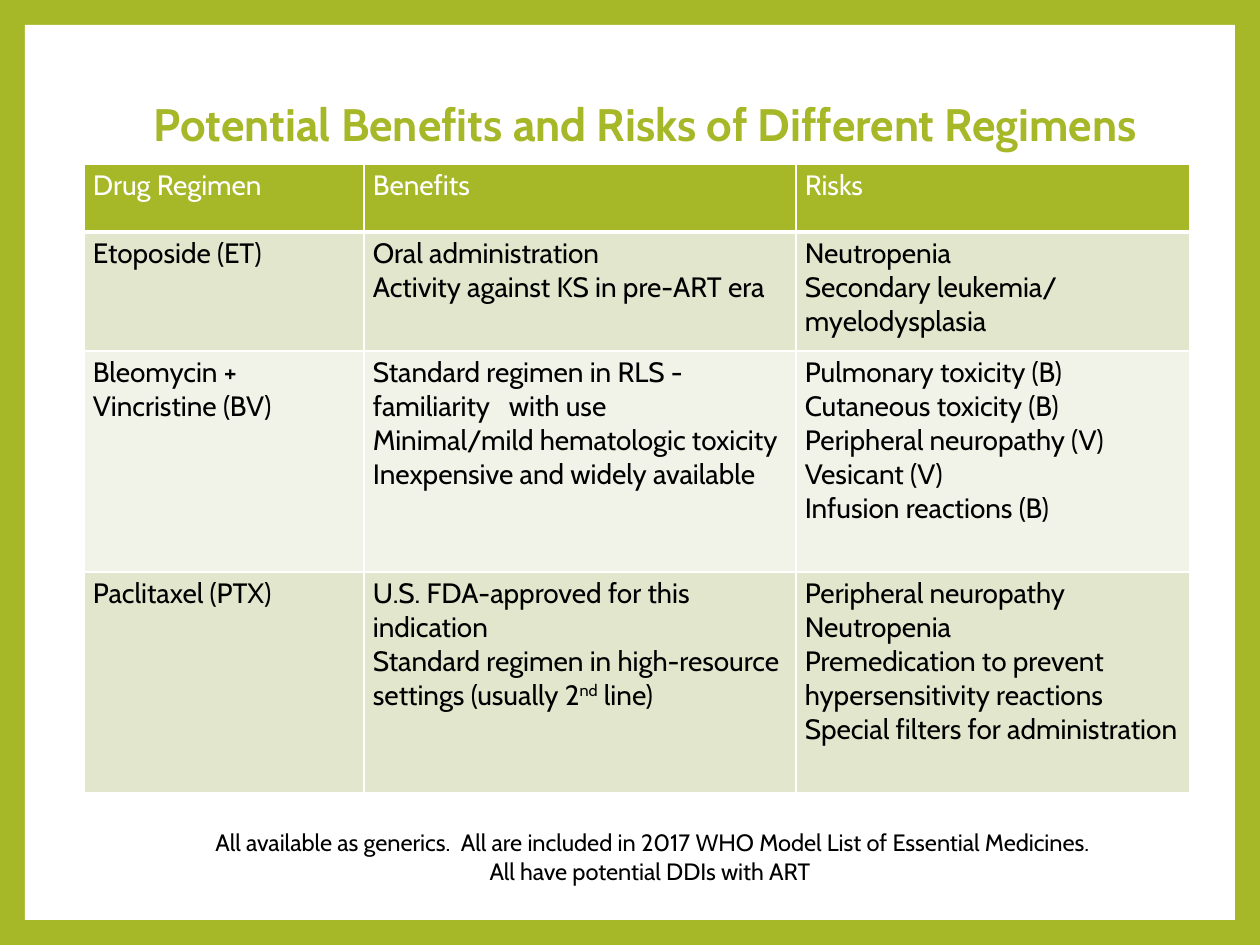
import pptx
import pptx.dml.color
import pptx.enum.shapes
import pptx.enum.text
import pptx.oxml
import pptx.oxml.ns
import pptx.util

PX_PER_INCH = 126
FONT = "Cabin"
COLORS = {
    "green": "A6B727",
    "white": "FFFFFF",
    "black": "000000",
    "band_dark": "E1E6CD",
    "band_light": "F1F3E8",
}
ALIGN = pptx.enum.text.PP_ALIGN
ANCHOR = pptx.enum.text.MSO_ANCHOR

TITLE = "Potential Benefits and Risks of Different Regimens"
COLUMN_WIDTHS = [280, 432, 394]
ROW_HEIGHTS = [68, 119, 221, 221]
# Each cell is a list of paragraphs; text between carets is superscript.
REGIMENS = [
    [["Drug Regimen"], ["Benefits"], ["Risks"]],
    [
        ["Etoposide (ET)"],
        ["Oral administration", "Activity against KS in pre-ART era"],
        ["Neutropenia", "Secondary leukemia/", "myelodysplasia"],
    ],
    [
        ["Bleomycin + Vincristine (BV)"],
        [
            "Standard regimen in RLS - familiarity   with use",
            "Minimal/mild hematologic toxicity",
            "Inexpensive and widely available",
        ],
        [
            "Pulmonary toxicity (B)",
            "Cutaneous toxicity (B)",
            "Peripheral neuropathy (V)",
            "Vesicant (V)",
            "Infusion reactions (B)",
        ],
    ],
    [
        ["Paclitaxel (PTX)"],
        [
            "U.S. FDA-approved for this indication",
            "Standard regimen in high-resource settings (usually 2^nd^ line)",
        ],
        [
            "Peripheral neuropathy",
            "Neutropenia",
            "Premedication to prevent hypersensitivity reactions",
            "Special filters for administration",
        ],
    ],
]
FOOTNOTE = [
    "All available as generics.  All are included in 2017 WHO Model List of Essential Medicines.",
    "All have potential DDIs with ART ",
]


def px(length):
    return pptx.util.Emu(round(length * 914400 / PX_PER_INCH))


def paint(fill, color):
    fill.solid()
    fill.fore_color.rgb = pptx.dml.color.RGBColor.from_string(COLORS[color])


def write(frame, lines, size, color="black", bold=False, align=ALIGN.LEFT, spacing=1.0):
    frame.word_wrap = True
    for index, line in enumerate(lines):
        paragraph = frame.paragraphs[0] if index == 0 else frame.add_paragraph()
        paragraph.alignment = align
        paragraph.line_spacing = spacing
        for part, text in enumerate(line.split("^")):
            run = paragraph.add_run()
            run.text = text
            run.font.name = FONT
            run.font.size = pptx.util.Pt(size)
            run.font.bold = bold
            paint(run.font.fill, color)
            if part % 2:
                run._r.get_or_add_rPr().set("baseline", "30000")


def border_cell(cell, bottom=1):
    """Draw white cell borders, all 1 pt wide but for the bottom one."""
    properties = cell._tc.get_or_add_tcPr()
    for side, width in {"L": 1, "R": 1, "T": 1, "B": bottom}.items():
        properties.append(pptx.oxml.parse_xml(
            f'<a:ln{side} {pptx.oxml.ns.nsdecls("a")} w="{pptx.util.Pt(width)}">'
            f'<a:solidFill><a:srgbClr val="{COLORS["white"]}"/></a:solidFill></a:ln{side}>'
        ))


def add_frame(slide, left, top, width, height):
    """Green background with a white panel behind everything else."""
    paint(slide.background.fill, "green")
    panel = slide.shapes.add_shape(
        pptx.enum.shapes.MSO_SHAPE.RECTANGLE, px(left), px(top), px(width), px(height)
    )
    panel.shadow.inherit = False
    paint(panel.fill, "white")
    panel.line.fill.background()
    slide.shapes._spTree.insert(2, panel._element)


def set_title(slide, left, top, width, height):
    title = slide.shapes.title
    title.left, title.top, title.width, title.height = map(px, (left, top, width, height))
    title.text_frame.vertical_anchor = ANCHOR.MIDDLE
    write(title.text_frame, [TITLE], 26, "green", bold=True, align=ALIGN.CENTER, spacing=0.9)


def add_regimen_table(slide, left, top):
    table = slide.shapes.add_table(
        len(ROW_HEIGHTS), len(COLUMN_WIDTHS), px(left), px(top),
        px(sum(COLUMN_WIDTHS)), px(sum(ROW_HEIGHTS)),
    ).table
    for column, width in zip(table.columns, COLUMN_WIDTHS):
        column.width = px(width)
    for index, (row, height, contents) in enumerate(zip(table.rows, ROW_HEIGHTS, REGIMENS)):
        row.height = px(height)
        is_header = index == 0
        band = "green" if is_header else ("band_light", "band_dark")[index % 2]
        for cell, lines in zip(row.cells, contents):
            cell.margin_left = cell.margin_right = px(9)
            cell.margin_top = cell.margin_bottom = px(5)
            border_cell(cell, bottom=3 if is_header else 1)
            paint(cell.fill, band)
            write(cell.text_frame, lines, 16, "white" if is_header else "black")


def add_footnote(slide, left, top, width, height):
    footnote = slide.shapes.add_textbox(px(left), px(top), px(width), px(height))
    write(footnote.text_frame, FOOTNOTE, 13.5, align=ALIGN.CENTER)


def main():
    presentation = pptx.Presentation()
    presentation.slide_width, presentation.slide_height = px(1260), px(945)
    slide = presentation.slides.add_slide(presentation.slide_layouts[5])
    add_frame(slide, 25, 25, 1210, 895)
    set_title(slide, 136, 91, 1020, 72)
    add_regimen_table(slide, 84, 164)
    add_footnote(slide, 161, 822, 983, 70)
    presentation.save("out.pptx")


if __name__ == "__main__":
    main()
